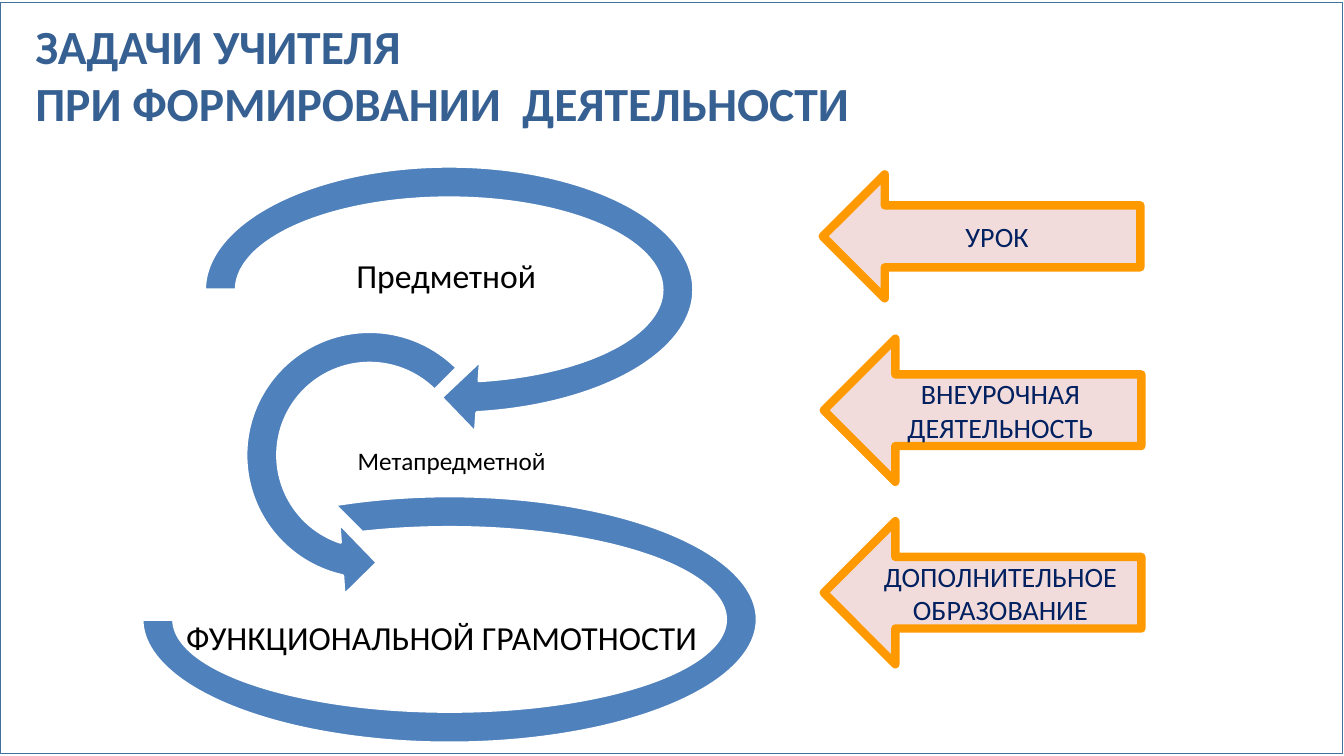
"""Build the slide on the teacher's tasks: a chain of three arcs and three arrows feeding it."""
from pptx import Presentation
from pptx.dml.color import RGBColor
from pptx.enum.shapes import MSO_SHAPE
from pptx.enum.text import MSO_ANCHOR, MSO_AUTO_SIZE, PP_ALIGN
from pptx.util import Inches, Pt

RECTANGLE, LEFT_ARROW = MSO_SHAPE.RECTANGLE, MSO_SHAPE.LEFT_ARROW
CIRCULAR_ARROW, LEFT_CIRCULAR_ARROW = MSO_SHAPE.CIRCULAR_ARROW, MSO_SHAPE.LEFT_CIRCULAR_ARROW
BLOCK_ARC = MSO_SHAPE.BLOCK_ARC
TOP, MIDDLE = MSO_ANCHOR.TOP, MSO_ANCHOR.MIDDLE
LEFT, CENTER = PP_ALIGN.LEFT, PP_ALIGN.CENTER
NO_AUTOFIT = MSO_AUTO_SIZE.NONE


def write(shape, text, size, color, bold=False, align=CENTER, anchor=MIDDLE,
          inset=None, line_spacing=1.0):
    frame = shape.text_frame
    frame.word_wrap = True
    frame.auto_size = NO_AUTOFIT
    frame.vertical_anchor = anchor
    if inset is not None:
        frame.margin_left = frame.margin_right = Inches(inset)
        frame.margin_top = frame.margin_bottom = Inches(inset)
    frame.text = text
    paragraph = frame.paragraphs[0]
    paragraph.alignment = align
    paragraph.line_spacing = line_spacing
    for run in paragraph.runs:
        run.font.name = "Calibri"
        run.font.size = Pt(size)
        run.font.bold = bold
        run.font.color.rgb = RGBColor.from_string(color)


def draw(preset, box, fill, line, width):
    shape = slide.shapes.add_shape(preset, *map(Inches, box))
    shape.shadow.inherit = False
    if fill:
        shape.fill.solid()
        shape.fill.fore_color.rgb = RGBColor.from_string(fill)
    else:
        shape.fill.background()
    shape.line.color.rgb = RGBColor.from_string(line)
    shape.line.width = Pt(width)
    return shape


presentation = Presentation()
presentation.slide_width = Inches(13.33)
presentation.slide_height = Inches(7.5)
slide = presentation.slides.add_slide(presentation.slide_layouts[5])

draw(RECTANGLE, (0, 0.02, 13.31, 7.45), None, "41709C", 0.25)

title = slide.shapes.title
title.left, title.top = Inches(0.35), Inches(0.17)
title.width, title.height = Inches(11.9), Inches(1.17)
write(title, "ЗАДАЧИ УЧИТЕЛЯ \vПРИ ФОРМИРОВАНИИ  ДЕЯТЕЛЬНОСТИ", 34, "376092",
      bold=True, align=LEFT, anchor=TOP, inset=0)

stages = [
    (CIRCULAR_ARROW, (1.83, 1.45, 5.25, 2.85), (0.1098, 11.42322, 45, 108, 0.125),
     "Предметной", (2.59, 2.23, 3.67, 1.05), 24),
    (LEFT_CIRCULAR_ARROW, (2.24, 3.09, 2.85, 2.85), (0.1098, 11.42322, 63, 189, 0.125),
     "Метапредметной", (1.86, 4.19, 5.24, 0.79), 18),
    (BLOCK_ARC, (1.41, 4.92, 6.1, 2.45), (135, 108, 0.1274),
     "ФУНКЦИОНАЛЬНОЙ ГРАМОТНОСТИ", (1.53, 5.85, 5.7, 1), 24),
]
for preset, arc_box, adjustments, text, label_box, size in stages:
    arc = draw(preset, arc_box, "4F81BD", "FFFFFF", 2)
    for index, value in enumerate(adjustments):
        arc.adjustments[index] = value
    label = slide.shapes.add_textbox(*map(Inches, label_box))
    write(label, text, size, "000000", inset=0.02, line_spacing=0.9)

sources = [
    ("УРОК", 8.16, 1.73, 1.23),
    ("ВНЕУРОЧНАЯ ДЕЯТЕЛЬНОСТЬ", 8.17, 3.36, 1.42),
    ("ДОПОЛНИТЕЛЬНОЕ ОБРАЗОВАНИЕ", 8.17, 5.17, 1.42),
]
for text, left, top, height in sources:
    arrow = draw(LEFT_ARROW, (left, top, 3.15, height), "F2DCDB", "FF9900", 6)
    write(arrow, text, 20, "002060")

presentation.save("out.pptx")
